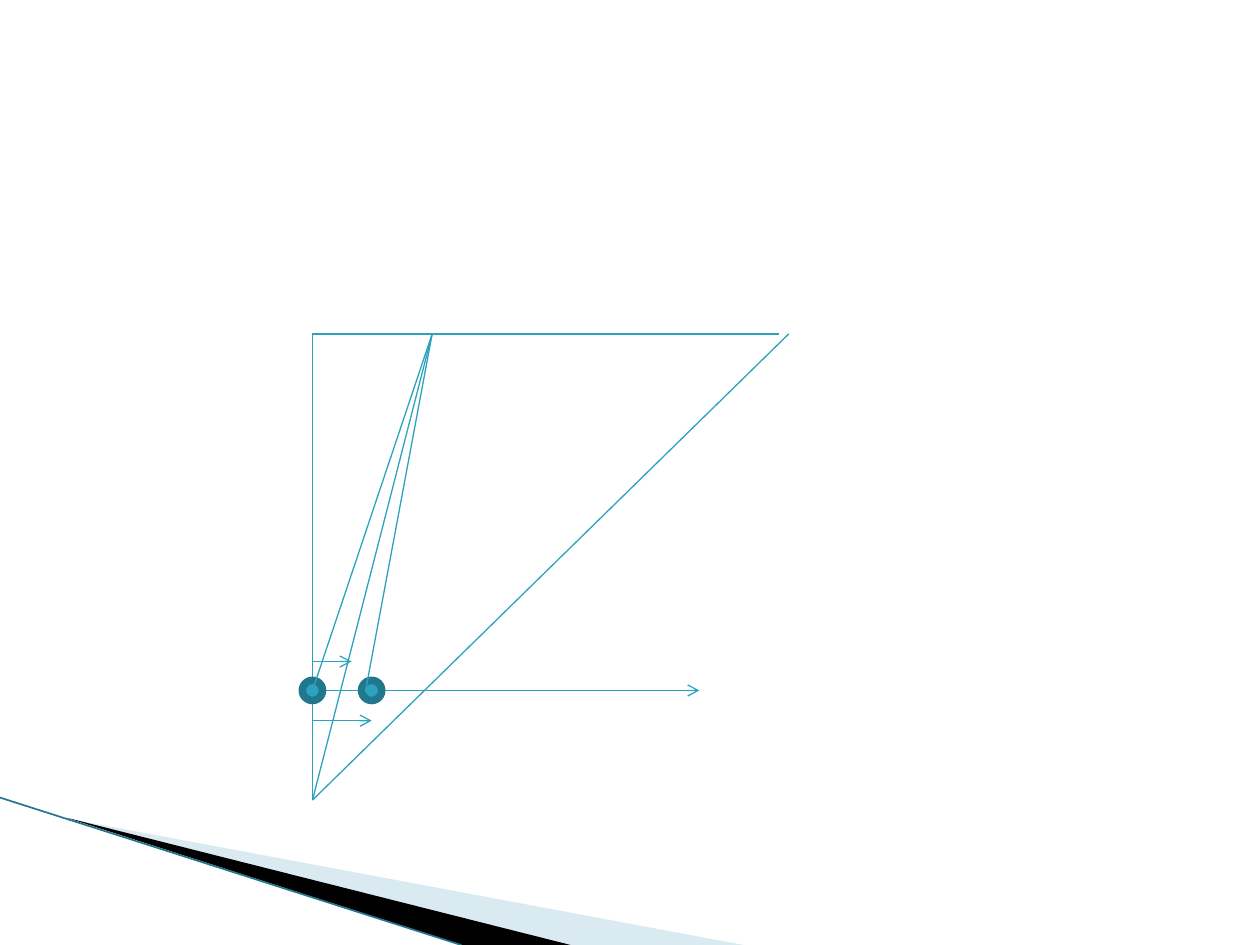
import dataclasses

import lxml.etree
import pptx
import pptx.dml.color
import pptx.enum.shapes
import pptx.oxml.ns
import pptx.util

PX = 9144


@dataclasses.dataclass(frozen=True)
class Theme:
    line: str = "2DA2BF"
    ring: str = "21788D"
    pale: str = "A0CBDC"
    dark: str = "000000"
    line_width: float = 0.75
    edge_width: float = 0.95
    ring_width: float = 4.33


@dataclasses.dataclass(frozen=True)
class Box:
    left: int
    top: int

    def at(self, point):
        return self.left + point[0], self.top + point[1]


THEME = Theme()


def rgb(value):
    return pptx.dml.color.RGBColor.from_string(value)


def add_child(parent, tag, **attributes):
    return lxml.etree.SubElement(parent, pptx.oxml.ns.qn(tag), **attributes)


def add_line(page, box, start, end, color=THEME.line, width=THEME.line_width, arrow=False):
    ends = [value * PX for point in (start, end) for value in box.at(point)]
    line = page.shapes.add_connector(pptx.enum.shapes.MSO_CONNECTOR.STRAIGHT, *ends)
    line.line.color.rgb = rgb(color)
    line.line.width = pptx.util.Pt(width)
    if arrow:
        add_child(line.line._get_or_add_ln(), "a:tailEnd", type="arrow")
    add_child(line._element.spPr, "a:effectLst")


def add_wedge(page, box, points, color, opacity=100):
    first, *rest = [box.at(point) for point in points]
    builder = page.shapes.build_freeform(*first, scale=PX)
    builder.add_line_segments(rest, close=True)
    wedge = builder.convert_to_shape()
    wedge.shadow.inherit = False
    wedge.fill.solid()
    wedge.fill.fore_color.rgb = rgb(color)
    wedge.line.fill.background()
    if opacity < 100:
        tint = wedge._element.spPr.find(".//" + pptx.oxml.ns.qn("a:srgbClr"))
        add_child(tint, "a:alpha", val=str(opacity * 1000))


def add_dot(page, box, center, radius=8):
    x, y = box.at(center)
    dot = page.shapes.add_shape(
        pptx.enum.shapes.MSO_SHAPE.OVAL,
        (x - radius) * PX, (y - radius) * PX, 2 * radius * PX, 2 * radius * PX,
    )
    dot.shadow.inherit = False
    dot.fill.solid()
    dot.fill.fore_color.rgb = rgb(THEME.line)
    dot.line.color.rgb = rgb(THEME.ring)
    dot.line.width = pptx.util.Pt(THEME.ring_width)


def draw_corner(page, box):
    add_wedge(page, box, [(55, 17), (590, 117), (452, 117)], THEME.pale, 40)
    add_wedge(page, box, [(53, 16), (453, 117), (367, 117)], THEME.dark)
    add_line(page, box, (0, 0), (366, 117), THEME.ring, THEME.edge_width)


def draw_ray_diagram(page, box):
    side, axis = 370, 283
    origin, apex, focus = (0, 0), (0, side), (95, 0)
    for start, end in [(origin, (side, 0)), (origin, apex), (apex, (378, 0))]:
        add_line(page, box, start, end)
    add_line(page, box, (0, axis), (307, axis), arrow=True)
    for x in (0, 47):
        add_dot(page, box, (x, axis))
    for y, length in [(axis + 24, 47), (axis - 23, 31)]:
        add_line(page, box, (0, y), (length, y), arrow=True)
    for start in [apex, (0, axis), (42, axis + 1)]:
        add_line(page, box, start, focus)


def main():
    deck = pptx.Presentation()
    deck.slide_width = 1000 * PX
    deck.slide_height = 750 * PX
    page = deck.slides.add_slide(deck.slide_layouts[6])
    draw_corner(page, Box(0, 633))
    draw_ray_diagram(page, Box(248, 265))
    deck.save("out.pptx")


if __name__ == "__main__":
    main()
